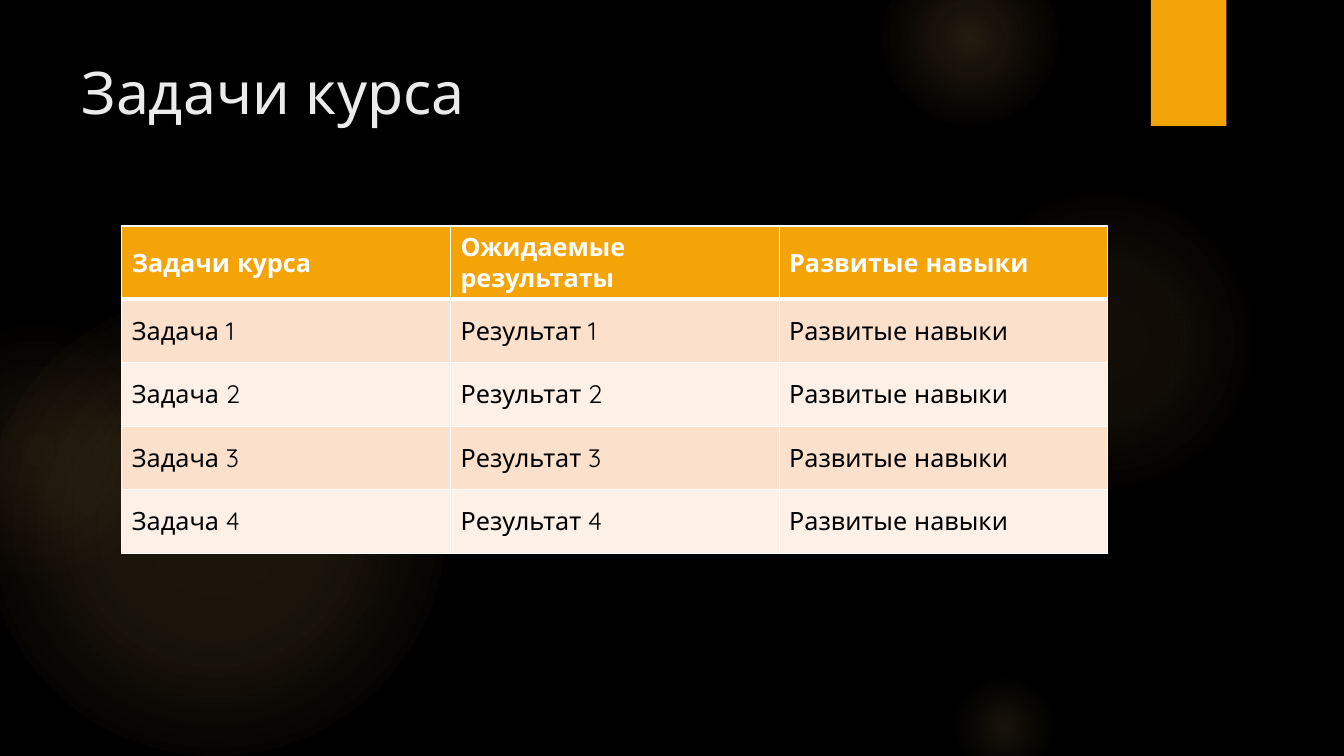
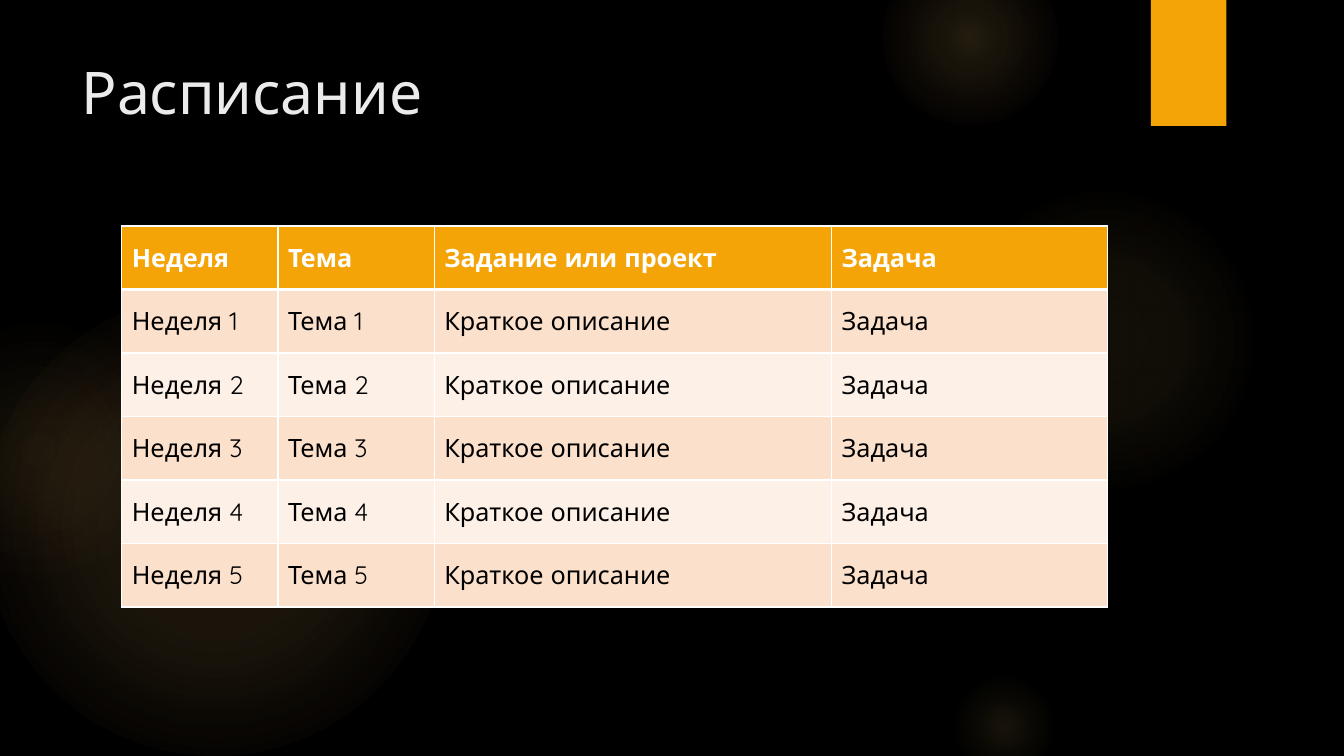
from lxml import etree
from pptx import Presentation
from pptx.dml.color import RGBColor
from pptx.enum.shapes import MSO_SHAPE
from pptx.enum.text import MSO_ANCHOR, PP_ALIGN
from pptx.oxml import parse_xml
from pptx.oxml.ns import qn
from pptx.util import Inches, Pt

OVAL, RECTANGLE = MSO_SHAPE.OVAL, MSO_SHAPE.RECTANGLE
TOP, MIDDLE, LEFT = MSO_ANCHOR.TOP, MSO_ANCHOR.MIDDLE, PP_ALIGN.LEFT
DRAWING_NS = "http://schemas.openxmlformats.org/drawingml/2006/main"

BLACK, WHITE = "000000", "FFFFFF"
ORANGE, GOLD, CORAL = "F5A408", "FAC96A", "F59B74"
BANDS = ("FBE0CC", "FDF0E7")

TITLE_FORMAT = {"name": "Quicksand", "size": Pt(42), "bold": False, "color": "EBEBEB"}
BODY_FORMAT = {"name": "Quicksand", "size": Pt(18), "bold": False, "color": BLACK}
HEADER_FORMAT = {**BODY_FORMAT, "bold": True, "color": WHITE}

# The slide is a grid of 160 columns by 90 rows
COLUMNS, ROWS = 160, 90
TITLE_BOX = (8.5, 6, 123.5, 18.4)
BADGE_BOX = (137, 0, 9, 15)
TABLE_LEFT, TABLE_TOP, ROW_HEIGHT = 14.5, 26.9, 7.56

# Left, top, diameter, then gradient stops: position %, colour, opacity %
GLOWS = [
    (-2, 35, 55, [(0, GOLD, 11), (36, GOLD, 10), (75, GOLD, 0)]),
    (-11, 38, 31, [(0, GOLD, 8), (36, GOLD, 5), (71, CORAL, 0)]),
    (113, 22, 37, [(0, GOLD, 7), (36, GOLD, 6), (69, GOLD, 0)]),
    (105, -6, 21, [(0, GOLD, 14), (36, GOLD, 7), (73, GOLD, 0)]),
    (113, 80, 13, [(0, GOLD, 10), (31, GOLD, 5), (66, GOLD, 0)]),
]

TABLES = [
    ("Задачи курса", (39.13, 39.13, 39.13),
     ["Задачи курса", "Ожидаемые результаты", "Развитые навыки"],
     [[f"Задача {n}", f"Результат {n}", "Развитые навыки"] for n in range(1, 5)]),
    ("Расписание", (18.6, 18.6, 47.3, 32.9),
     ["Неделя", "Тема", "Задание или проект", "Задача"],
     [[f"Неделя {n}", f"Тема {n}", "Краткое описание", "Задача"] for n in range(1, 6)]),
]


def grid(units):
    return Inches(units / 12)


def rgb(value):
    return RGBColor.from_string(value)


def paint(fill, color):
    fill.solid()
    fill.fore_color.rgb = rgb(color)


def format_font(font, values):
    for name, value in values.items():
        if name == "color":
            font.color.rgb = rgb(value)
        else:
            setattr(font, name, value)


def place(shape, box):
    for name, units in zip(("left", "top", "width", "height"), box):
        setattr(shape, name, grid(units))


def add_plain_shape(page, kind, box):
    shape = page.shapes.add_shape(kind, *map(grid, box))
    shape.shadow.inherit = False
    shape.line.fill.background()
    return shape


def add_glow(page, left, top, diameter, stops):
    shape = add_plain_shape(page, OVAL, (left, top, diameter, diameter))
    stop_xml = "".join(
        f'<a:gs pos="{position * 1000}"><a:srgbClr val="{color}">'
        f'<a:alpha val="{opacity * 1000}"/></a:srgbClr></a:gs>'
        for position, color, opacity in stops)
    gradient = parse_xml(
        f'<a:gradFill xmlns:a="{DRAWING_NS}"><a:gsLst>{stop_xml}</a:gsLst>'
        '<a:path path="circle"><a:fillToRect l="50000" t="50000" r="50000" b="50000"/>'
        '</a:path></a:gradFill>')
    shape.element.spPr.find(qn("a:prstGeom")).addnext(gradient)
    return shape


def add_badge(page):
    shape = add_plain_shape(page, RECTANGLE, BADGE_BOX)
    paint(shape.fill, ORANGE)
    shape.element.spPr.find(qn("a:effectLst")).append(parse_xml(
        f'<a:outerShdw xmlns:a="{DRAWING_NS}" blurRad="{Pt(3)}" dist="{Pt(2)}" '
        f'dir="5400000"><a:srgbClr val="{BLACK}"><a:alpha val="45000"/>'
        '</a:srgbClr></a:outerShdw>'))
    return shape


def decorate_master(deck, page):
    """Draw the shared decoration on a page, then move it behind the master's placeholders."""
    master = deck.slide_master
    paint(master.background.fill, BLACK)
    shapes = [add_glow(page, *glow) for glow in GLOWS] + [add_badge(page)]
    tree = master.element.cSld.spTree
    for index, shape in enumerate(shapes):
        shape.element.nvSpPr.cNvPr.set("id", str(100 + index))
        tree.insert(2 + index, shape.element)


def set_title(page, text):
    title = page.shapes.title
    title.text = text
    title.text_frame.vertical_anchor = TOP
    para = title.text_frame.paragraphs[0]
    para.alignment = LEFT
    format_font(para.runs[0].font, TITLE_FORMAT)


def set_borders(cell, widths):
    properties = cell._tc.get_or_add_tcPr()
    for side, width in widths.items():
        line = etree.SubElement(properties, qn(f"a:ln{side}"), w=str(Pt(width)))
        fill = etree.SubElement(line, qn("a:solidFill"))
        etree.SubElement(fill, qn("a:srgbClr"), val=WHITE)


def fill_cell(cell, text, values, color, borders):
    cell.text = text
    cell.vertical_anchor = MIDDLE
    format_font(cell.text_frame.paragraphs[0].runs[0].font, values)
    set_borders(cell, borders)
    paint(cell.fill, color)


def add_banded_table(page, widths, header, body):
    lines = [header] + body
    table = page.shapes.add_table(
        len(lines), len(widths), grid(TABLE_LEFT), grid(TABLE_TOP),
        grid(sum(widths)), grid(ROW_HEIGHT * len(lines))).table
    for column, width in zip(table.columns, widths):
        column.width = grid(width)
    for index, line in enumerate(lines):
        table.rows[index].height = grid(ROW_HEIGHT)
        values = BODY_FORMAT if index else HEADER_FORMAT
        color = BANDS[(index - 1) % 2] if index else ORANGE
        borders = {"L": 1, "R": 1, "T": 3 if index == 1 else 1, "B": 1 if index else 3}
        for cell, text in zip(table.rows[index].cells, line):
            fill_cell(cell, text, values, color, borders)


def main():
    deck = Presentation()
    deck.slide_width, deck.slide_height = grid(COLUMNS), grid(ROWS)
    layout = deck.slide_layouts.get_by_name("Title Only")
    place(layout.placeholders[0], TITLE_BOX)
    pages = [deck.slides.add_slide(layout) for _ in TABLES]
    decorate_master(deck, pages[0])
    for page, (title, widths, header, body) in zip(pages, TABLES):
        set_title(page, title)
        add_banded_table(page, widths, header, body)
    deck.save("out.pptx")


if __name__ == "__main__":
    main()
